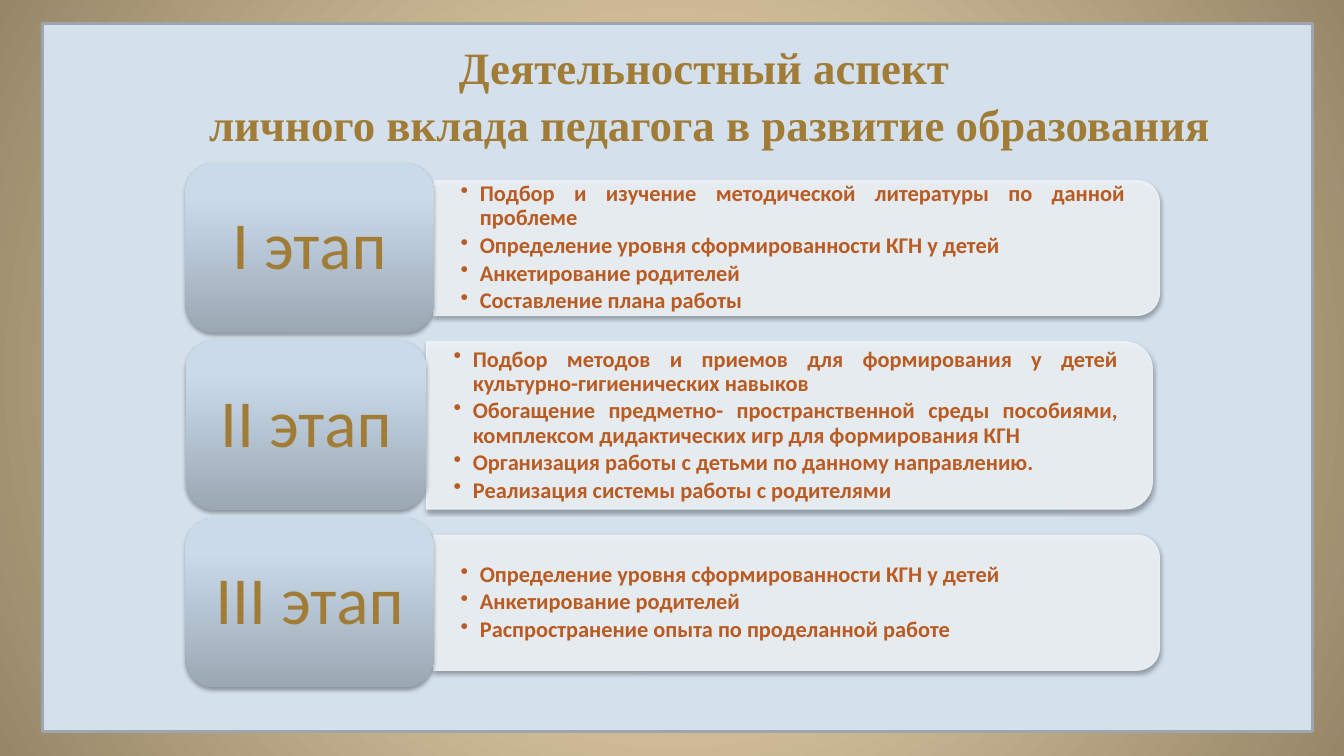
"""Build a slide with three stages of a teacher's contribution to education."""
from copy import deepcopy

from lxml.etree import SubElement
from pptx import Presentation
from pptx.dml.color import RGBColor
from pptx.enum.shapes import MSO_SHAPE
from pptx.enum.text import MSO_ANCHOR, PP_ALIGN
from pptx.oxml.ns import qn
from pptx.util import Inches, Pt

SAND = RGBColor(0xFF, 0xE9, 0xC1)
BROWN = RGBColor(0x97, 0x86, 0x68)
PALE = RGBColor(0xD4, 0xE1, 0xED)
EDGE = RGBColor(0x9D, 0xA6, 0xAF)
GOLD = RGBColor(0xA1, 0x7C, 0x36)
RUST = RGBColor(0xB9, 0x5B, 0x22)
MIST = RGBColor(0xEF, 0xF4, 0xF8)
STEEL = RGBColor(0x9B, 0xA8, 0xB4)
SKY = RGBColor(0xCA, 0xDA, 0xE9)
LIGHT = RGBColor(0xCA, 0xDB, 0xEB)

STAGES = [
    ("I этап", 2.46, 1.34, PP_ALIGN.JUSTIFY, [
        "Подбор и изучение методической литературы по данной проблеме",
        "Определение уровня сформированности КГН у детей",
        "Анкетирование родителей",
        "Составление плана работы"]),
    ("II этап", 2.39, 1.66, PP_ALIGN.JUSTIFY, [
        "Подбор методов и приемов для формирования у детей "
        "культурно-гигиенических навыков",
        "Обогащение предметно- пространственной среды пособиями, "
        "комплексом дидактических игр для формирования КГН",
        "Организация работы с детьми по данному направлению.",
        "Реализация системы работы с родителями"]),
    ("III этап", 2.46, 1.34, PP_ALIGN.LEFT, [
        "Определение уровня сформированности КГН у детей",
        "Анкетирование родителей",
        "Распространение опыта по проделанной работе"]),
]
LEFT, TOP, STEP, TALL, LONG = 1.84, 1.62, 1.76, 1.68, 7.2


def cast(shape):
    shape.shadow.inherit = False
    effects = shape._element.spPr.find(qn("a:effectLst"))
    outer = SubElement(effects, qn("a:outerShdw"), blurRad=str(Pt(3.1)),
                       dist=str(Pt(1.8)), dir="5400000", rotWithShape="0")
    tint = SubElement(outer, qn("a:srgbClr"), val="000000")
    SubElement(tint, qn("a:alpha"), val="35000")


def style(par, name, size, color, bold):
    par.font.name = name
    par.font.size = Pt(size)
    par.font.color.rgb = color
    par.font.bold = bold


deck = Presentation()
deck.slide_width = Inches(13.33)
deck.slide_height = Inches(7.5)
slide = deck.slides.add_slide(deck.slide_layouts[6])
shapes = slide.shapes

back = slide.background.fill
back.gradient()
for stop, color, place in zip(back.gradient_stops, (SAND, BROWN), (0, 1)):
    stop.color.rgb = color
    stop.position = place
grad = next(slide._element.iter(qn("a:gradFill")))
grad.remove(grad.find(qn("a:lin")))
ring = SubElement(grad, qn("a:path"))
ring.set("path", "circle")
SubElement(ring, qn("a:fillToRect"), l="50000", t="50000", r="50000", b="50000")

frame = shapes.add_shape(MSO_SHAPE.RECTANGLE, Inches(0.42), Inches(0.23),
                         Inches(12.6), Inches(7.03))
frame.shadow.inherit = False
frame.fill.solid()
frame.fill.fore_color.rgb = PALE
frame.line.color.rgb = EDGE
frame.line.width = Pt(2)

title = shapes.add_textbox(Inches(0.97), Inches(0.38), Inches(12.14), Inches(1.1))
text = title.text_frame
text.word_wrap = True
text.vertical_anchor = MSO_ANCHOR.MIDDLE
par = text.paragraphs[0]
par.text = "Деятельностный аспект \vличного вклада педагога в развитие образования"
par.alignment = PP_ALIGN.CENTER
par.line_spacing = 1.05
style(par, "Times New Roman", 32, GOLD, True)

for row, (name, wide, high, align, points) in enumerate(STAGES):
    top = TOP + row * STEP
    mid = top + TALL / 2
    start = LEFT + wide

    panel = shapes.add_shape(
        MSO_SHAPE.ROUND_2_SAME_RECTANGLE, Inches(start + (LONG - high) / 2),
        Inches(mid - LONG / 2), Inches(high), Inches(LONG))
    panel.rotation = 90
    panel.fill.solid()
    panel.fill.fore_color.rgb = MIST
    panel.line.color.rgb = MIST
    panel.line.width = Pt(0.75)
    for tint in panel._element.spPr.iter(qn("a:srgbClr")):
        SubElement(tint, qn("a:alpha"), val="90000")
    cast(panel)

    tall = high - 0.14
    box = shapes.add_textbox(Inches(start), Inches(mid - tall / 2),
                             Inches(7.13), Inches(tall))
    text = box.text_frame
    text.word_wrap = True
    text.vertical_anchor = MSO_ANCHOR.MIDDLE
    text.margin_left = text.margin_right = Inches(0.27)
    text.margin_top = text.margin_bottom = Inches(0.14)
    for spot, point in enumerate(points):
        par = text.add_paragraph() if spot else text.paragraphs[0]
        par.text = point
        par.level = 1
        par.alignment = align
        par.line_spacing = 0.9
        par.space_after = Pt(2.4)
        props = par._p.get_or_add_pPr()
        props.set("marL", str(Inches(0.19)))
        props.set("indent", str(-Inches(0.19)))
        SubElement(props, qn("a:buChar"), char="•")
        style(par, "Calibri", 16, RUST, True)

    tile = shapes.add_shape(MSO_SHAPE.ROUNDED_RECTANGLE, Inches(LEFT), Inches(top),
                            Inches(wide), Inches(TALL))
    tile.fill.gradient()
    tile.fill.gradient_angle = 90
    stops = next(tile._element.iter(qn("a:gsLst")))
    stops.append(deepcopy(stops[-1]))
    for stop, color, place in zip(tile.fill.gradient_stops,
                                  (STEEL, SKY, LIGHT), (0, 0.8, 1)):
        stop.color.rgb = color
        stop.position = place
    tile.line.fill.background()
    cast(tile)
    text = tile.text_frame
    text.word_wrap = True
    text.vertical_anchor = MSO_ANCHOR.MIDDLE
    text.margin_left = text.margin_right = Inches(0.18)
    text.margin_top = text.margin_bottom = Inches(0.1)
    par = text.paragraphs[0]
    par.text = name
    par.alignment = PP_ALIGN.CENTER
    par.line_spacing = 0.9
    style(par, "Calibri", 48, GOLD, False)

deck.save("out.pptx")
